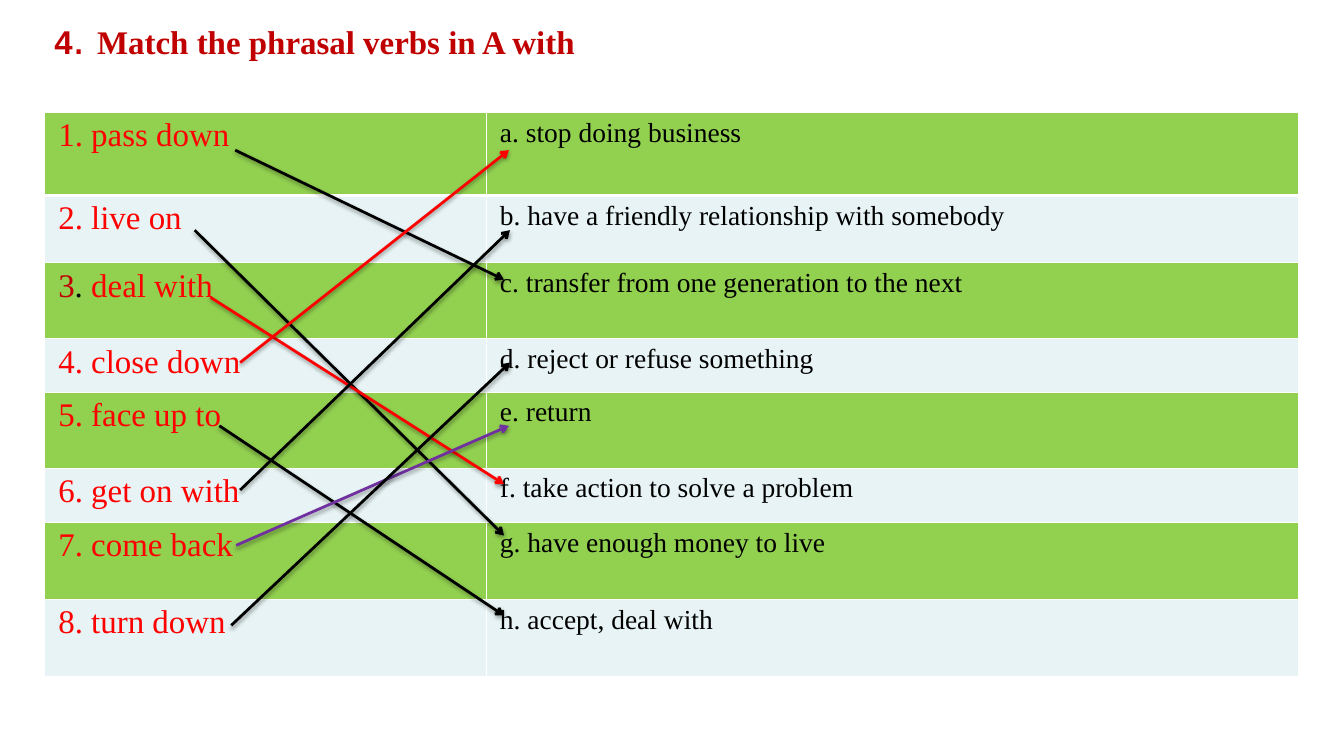
from dataclasses import dataclass

from lxml import etree
from pptx import Presentation
from pptx.dml.color import RGBColor
from pptx.enum.shapes import MSO_CONNECTOR
from pptx.enum.text import MSO_ANCHOR, MSO_AUTO_SIZE, PP_ALIGN
from pptx.oxml.ns import qn
from pptx.util import Emu, Pt

STRAIGHT = MSO_CONNECTOR.STRAIGHT
TOP, MIDDLE = MSO_ANCHOR.TOP, MSO_ANCHOR.MIDDLE
LEFT = PP_ALIGN.LEFT
NO_AUTOFIT = MSO_AUTO_SIZE.NONE


@dataclass(frozen=True)
class Theme:
    serif: str = "Times New Roman"
    sans: str = "Arial"
    heading: str = "C00000"
    verb: str = "FF0000"
    ink: str = "000000"
    purple: str = "7030A0"
    border: str = "FFFFFF"
    bands: tuple = ("92D050", "E7F3F4")
    large: int = 24
    small: int = 20
    dot: int = 32


THEME = Theme()
SCALE = 9144
SLIDE_SIZE = (1360, 750)
TITLE_BOX = (45, -25, 1224, 125)
TABLE_AT = (45, 114)
COLUMN_WIDTHS = (447, 822)
CELL_MARGINS = (14, 5)

TITLE = [
    ("4", dict(font=THEME.sans, bold=True)),
    (". ", dict(font=THEME.sans, size=THEME.dot)),
    ("Match the phrasal verbs in A with", dict(bold=True)),
]
ROWS = [
    (84, "1. pass down", "a. stop doing business"),
    (68, "2. live on", "b. have a friendly relationship with somebody"),
    (77, "3. deal with", "c. transfer from one generation to the next"),
    (54, "4. close down", "d. reject or refuse something"),
    (77, "5. face up to", "e. return"),
    (55, "6. get on with", "f. take action to solve a problem"),
    (78, "7. come back", "g. have enough money to live"),
    (78, "8. turn down", "h. accept, deal with"),
]
NUMBER_COLORS = {"3. deal with": [("3", THEME.heading), (". ", THEME.ink),
                                  ("deal with", THEME.verb)]}
MATCHES = [
    ((238, 152), (510, 283), THEME.ink),
    ((197, 233), (510, 542), THEME.ink),
    ((213, 301), (510, 490), THEME.verb),
    ((243, 367), (515, 152), THEME.verb),
    ((222, 431), (510, 623), THEME.ink),
    ((243, 496), (516, 233), THEME.ink),
    ((239, 552), (515, 431), THEME.purple),
    ((234, 633), (516, 367), THEME.ink),
]


def px(length):
    return Emu(length * SCALE)


def write(paragraph, text, font=THEME.serif, size=THEME.large,
          color=THEME.ink, bold=False):
    run = paragraph.add_run()
    run.text = text
    run.font.name = font
    run.font.size = Pt(size)
    run.font.bold = bold
    run.font.color.rgb = RGBColor.from_string(color)


def add_xml(parent, tag, **attributes):
    return etree.SubElement(parent, qn(tag), attributes)


def format_cell(cell, row):
    side, edge = CELL_MARGINS
    cell.margin_left = cell.margin_right = px(side)
    cell.margin_top = cell.margin_bottom = px(edge)
    cell.vertical_anchor = TOP
    properties = cell._tc.get_or_add_tcPr()
    widths = {"L": 1, "R": 1, "T": 3 if row == 1 else 1, "B": 3 if row == 0 else 1}
    for edge_name, width in widths.items():
        border = add_xml(properties, f"a:ln{edge_name}", w=str(Pt(width)))
        add_xml(add_xml(border, "a:solidFill"), "a:srgbClr", val=THEME.border)
    cell.fill.solid()
    cell.fill.fore_color.rgb = RGBColor.from_string(THEME.bands[row % 2])


def add_title(slide):
    title = slide.shapes.title
    title.left, title.top, title.width, title.height = map(px, TITLE_BOX)
    frame = title.text_frame
    frame.auto_size = NO_AUTOFIT
    frame.word_wrap = True
    frame.vertical_anchor = MIDDLE
    heading = frame.paragraphs[0]
    heading.alignment = LEFT
    for text, style in TITLE:
        write(heading, text, color=THEME.heading, **style)


def add_phrases(slide):
    heights = [height for height, _, _ in ROWS]
    left, top = TABLE_AT
    phrases = slide.shapes.add_table(
        len(ROWS), len(COLUMN_WIDTHS), px(left), px(top),
        px(sum(COLUMN_WIDTHS)), px(sum(heights))).table
    for column, width in zip(phrases.columns, COLUMN_WIDTHS):
        column.width = px(width)
    phrases.first_row = False
    for row, (height, verb, meaning) in enumerate(ROWS):
        phrases.rows[row].height = px(height)
        verb_cell, meaning_cell = phrases.cell(row, 0), phrases.cell(row, 1)
        format_cell(verb_cell, row)
        format_cell(meaning_cell, row)
        for text, color in NUMBER_COLORS.get(verb, [(verb, THEME.verb)]):
            write(verb_cell.text_frame.paragraphs[0], text, color=color)
        write(meaning_cell.text_frame.paragraphs[0], meaning, size=THEME.small)


def add_match(slide, start, end, color):
    match = slide.shapes.add_connector(STRAIGHT, *map(px, start + end))
    match.line.width = Pt(2)
    match.line.color.rgb = RGBColor.from_string(color)
    add_xml(match.line._get_or_add_ln(), "a:tailEnd", type="arrow")
    effects = add_xml(match._element.spPr, "a:effectLst")
    shadow = add_xml(effects, "a:outerShdw", blurRad="40000", dist="20000",
                     dir="5400000", rotWithShape="0")
    shade = add_xml(shadow, "a:srgbClr", val=THEME.ink)
    add_xml(shade, "a:alpha", val="38000")


def main():
    deck = Presentation()
    deck.slide_width, deck.slide_height = map(px, SLIDE_SIZE)
    slide = deck.slides.add_slide(deck.slide_layouts[5])
    add_title(slide)
    add_phrases(slide)
    for match in MATCHES:
        add_match(slide, *match)
    deck.save("out.pptx")


if __name__ == "__main__":
    main()
